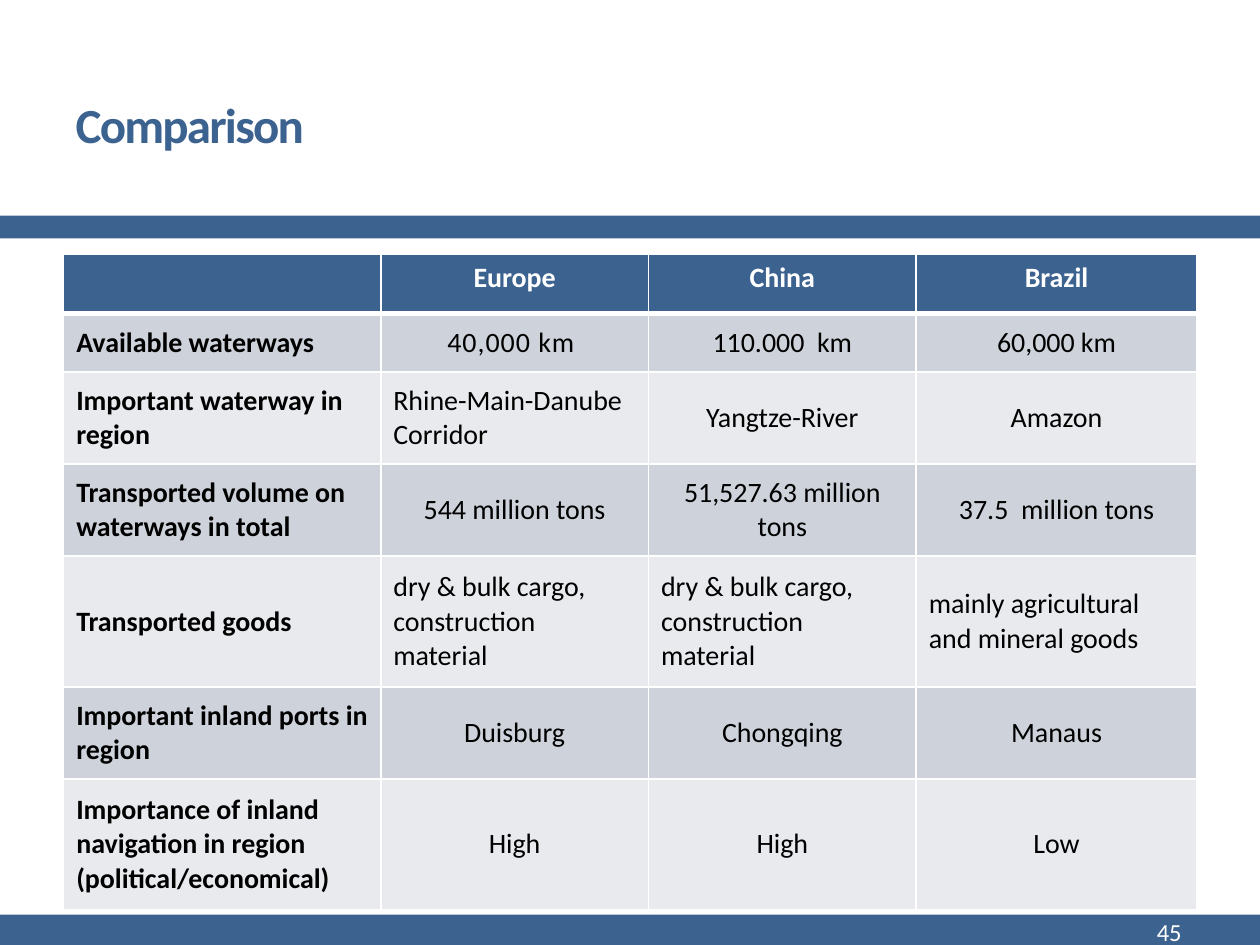
from lxml import etree
from pptx import Presentation
from pptx.dml.color import RGBColor
from pptx.enum.shapes import MSO_SHAPE
from pptx.enum.text import MSO_ANCHOR, PP_ALIGN
from pptx.oxml.ns import qn
from pptx.util import Pt

RECTANGLE = MSO_SHAPE.RECTANGLE
MIDDLE, TOP = MSO_ANCHOR.MIDDLE, MSO_ANCHOR.TOP
LEFT, CENTER, RIGHT = PP_ALIGN.LEFT, PP_ALIGN.CENTER, PP_ALIGN.RIGHT

FONT = "Calibri"
BLUE = RGBColor(0x3C, 0x62, 0x8F)
WHITE = RGBColor(0xFF, 0xFF, 0xFF)
BLACK = RGBColor(0x00, 0x00, 0x00)
DARK_ROW = RGBColor(0xCE, 0xD3, 0xDB)
LIGHT_ROW = RGBColor(0xE8, 0xEA, 0xEE)

SLIDE_WIDTH, SLIDE_HEIGHT = 720, 540
COLUMN_WIDTHS = (181.2, 153, 153, 160.4)
ROW_HEIGHTS = (33.6, 33.6, 52.6, 52.6, 74.8, 52.6, 74.8)
ROWS = (
    ("", "Europe", "China", "Brazil"),
    ("Available waterways", "40,000 km ", "110.000  km", "60,000 km"),
    ("Important waterway in region", "Rhine-Main-Danube Corridor", "Yangtze-River", "Amazon"),
    ("Transported volume on waterways in total", "544 million tons",
     "51,527.63 million tons", "37.5  million tons"),
    ("Transported goods", "dry & bulk cargo, construction material",
     "dry & bulk cargo, construction material", "mainly agricultural and mineral goods"),
    ("Important inland ports in region", "Duisburg", "Chongqing", "Manaus"),
    ("Importance of inland navigation in region (political/economical)", "High", "High", "Low"),
)
LEFT_ALIGNED = {(2, 1), (4, 1), (4, 2), (4, 3)}
LETTER_SPACED = (1, 1)


def format_text(paragraph, size, color, bold=False, alignment=LEFT, spacing=0):
    """Format a paragraph and its runs, with letter spacing in points."""
    paragraph.alignment = alignment
    for run in paragraph.runs:
        run.font.name = FONT
        run.font.size = Pt(size)
        run.font.bold = bold
        run.font.color.rgb = color
        if spacing:
            run._r.get_or_add_rPr().set("spc", str(round(spacing * 100)))


def add_band(slide, left, top, width, height):
    """Add a plain blue band."""
    band = slide.shapes.add_shape(RECTANGLE, Pt(left), Pt(top), Pt(width), Pt(height))
    band.shadow.inherit = False
    band.fill.solid()
    band.fill.fore_color.rgb = BLUE
    band.line.fill.background()


def add_title(slide, left, top, width, height):
    """Place the slide title in its placeholder."""
    title = slide.shapes.title
    title.left, title.top, title.width, title.height = Pt(left), Pt(top), Pt(width), Pt(height)
    title.text_frame.text = "Comparison"
    title.text_frame.vertical_anchor = MIDDLE
    format_text(title.text_frame.paragraphs[0], 28, BLUE, bold=True, spacing=-1)


def set_borders(cell, top_width, bottom_width):
    """Draw white borders around a cell, one point wide at the sides."""
    properties = cell._tc.get_or_add_tcPr()
    widths = {"lnL": 1, "lnR": 1, "lnT": top_width, "lnB": bottom_width}
    for index, (side, width) in enumerate(widths.items()):
        line = etree.Element(qn(f"a:{side}"), w=str(Pt(width)))
        fill = etree.SubElement(line, qn("a:solidFill"))
        etree.SubElement(fill, qn("a:srgbClr"), val=str(WHITE))
        properties.insert(index, line)


def fill_cell(cell, row, column):
    """Write and format one cell of the comparison."""
    header = row == 0
    cell.text_frame.text = ROWS[row][column]
    cell.vertical_anchor = TOP if header else MIDDLE
    cell.fill.solid()
    cell.fill.fore_color.rgb = BLUE if header else (LIGHT_ROW, DARK_ROW)[row % 2]
    left_aligned = column == 0 or (row, column) in LEFT_ALIGNED
    format_text(
        cell.text_frame.paragraphs[0], 16, WHITE if header else BLACK,
        bold=header or column == 0,
        alignment=LEFT if left_aligned else CENTER,
        spacing=0.6 if (row, column) == LETTER_SPACED else 0,
    )
    set_borders(cell, 3 if row == 1 else 1, 3 if header else 1)


def add_comparison_table(slide, left, top, width, height):
    """Add the table of waterways by region."""
    table = slide.shapes.add_table(
        len(ROWS), len(COLUMN_WIDTHS), Pt(left), Pt(top), Pt(width), Pt(height)).table
    for column, column_width in zip(table.columns, COLUMN_WIDTHS):
        column.width = Pt(column_width)
    for row, row_height in zip(table.rows, ROW_HEIGHTS):
        row.height = Pt(row_height)
    for row in range(len(ROWS)):
        for column in range(len(COLUMN_WIDTHS)):
            fill_cell(table.cell(row, column), row, column)


def add_slide_number(slide, left, top, width, height):
    """Add the slide number over the footer band."""
    box = slide.shapes.add_textbox(Pt(left), Pt(top), Pt(width), Pt(height))
    box.text_frame.word_wrap = True
    box.text_frame.vertical_anchor = MIDDLE
    box.text_frame.text = "45"
    format_text(box.text_frame.paragraphs[0], 14, WHITE, alignment=RIGHT)


def main():
    """Build and save the presentation."""
    presentation = Presentation()
    presentation.slide_width, presentation.slide_height = Pt(SLIDE_WIDTH), Pt(SLIDE_HEIGHT)
    slide = presentation.slides.add_slide(presentation.slide_layouts[5])
    add_band(slide, 0, 522.7, SLIDE_WIDTH, SLIDE_HEIGHT - 522.7)
    add_band(slide, 0, 123.2, SLIDE_WIDTH, 13)
    add_title(slide, 36, 31.7, 375, 77.8)
    add_comparison_table(slide, 36.4, 145.4, sum(COLUMN_WIDTHS), sum(ROW_HEIGHTS))
    add_slide_number(slide, 598.3, 519.5, 84, 26)
    presentation.save("out.pptx")


if __name__ == "__main__":
    main()
